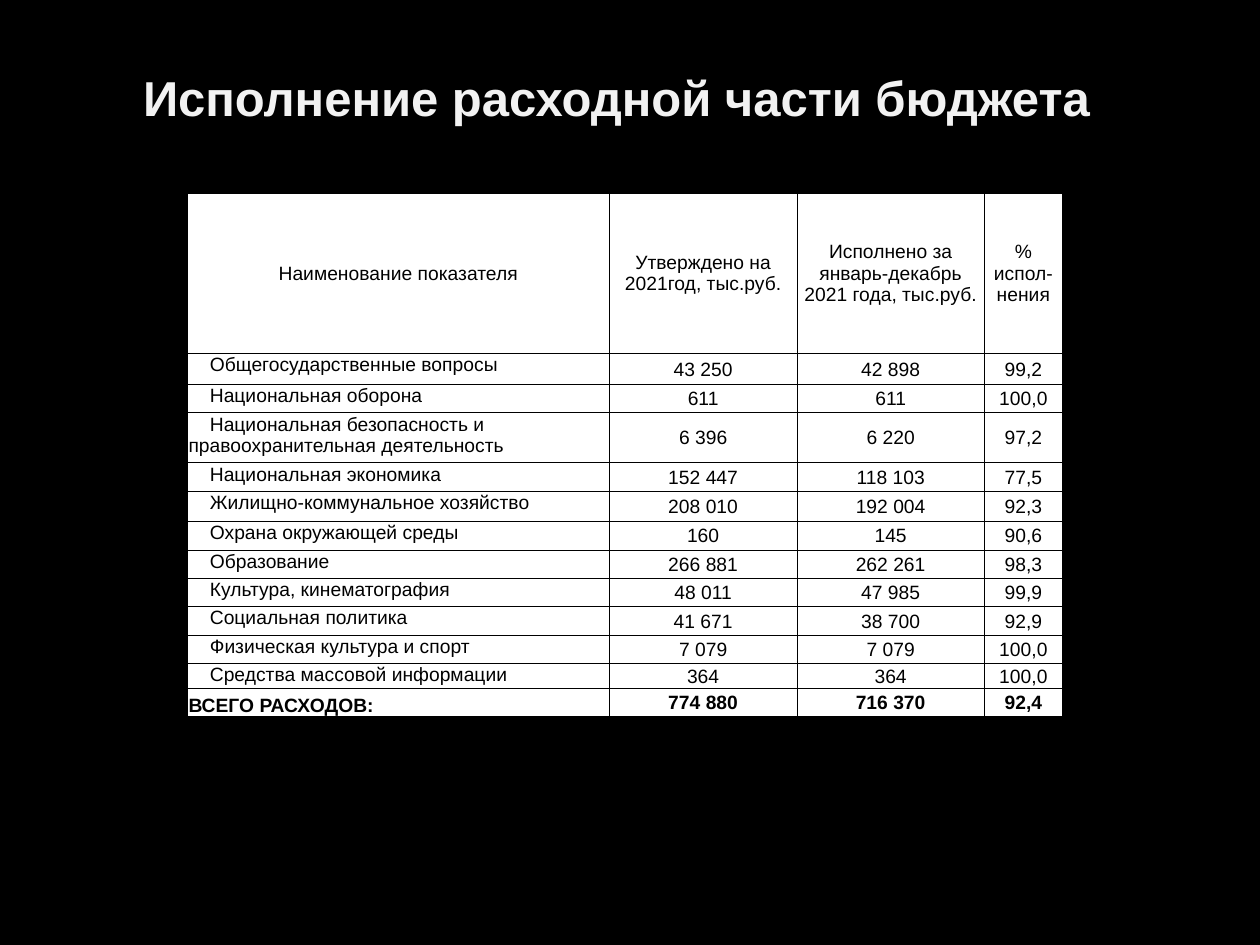
from dataclasses import dataclass
from lxml.etree import SubElement
from pptx import Presentation
from pptx.dml.color import RGBColor as Color
from pptx.enum.text import MSO_ANCHOR as Anchor, PP_ALIGN as Align
from pptx.oxml.ns import qn
from pptx.util import Cm, Pt

TITLE = "Исполнение расходной части бюджета"
HEADER = (
    "Наименование показателя",
    "Утверждено на 2021год, тыс.руб.",
    "Исполнено за январь-декабрь 2021 года, тыс.руб.",
    "% испол-нения",
)
EXPENSES = [
    ("Общегосударственные вопросы", "43 250", "42 898", "99,2"),
    ("Национальная оборона", "611", "611", "100,0"),
    ("Национальная безопасность и правоохранительная деятельность", "6 396", "6 220", "97,2"),
    ("Национальная экономика", "152 447", "118 103", "77,5"),
    ("Жилищно-коммунальное хозяйство", "208 010", "192 004", "92,3"),
    ("Охрана окружающей среды", "160", "145", "90,6"),
    ("Образование", "266 881", "262 261", "98,3"),
    ("Культура, кинематография", "48 011", "47 985", "99,9"),
    ("Социальная политика", "41 671", "38 700", "92,9"),
    ("Физическая культура и спорт", "7 079", "7 079", "100,0"),
    ("Средства массовой информации", "364", "364", "100,0"),
]
TOTAL = ("ВСЕГО РАСХОДОВ:", "774 880", "716 370", "92,4")

COLUMN_WIDTHS = (8.5, 3.79, 3.77, 1.58)
ROW_HEIGHTS = (3.23, 0.63, 0.57, 1.01, 0.58, 0.6, 0.58, 0.57, 0.57, 0.58, 0.57, 0.5, 0.57)
NAME_INDENT = 0.43


@dataclass(frozen=True)
class Theme:
    """Colours, font and type sizes of the slide."""
    background: str = "000000"
    title: str = "F2F2F2"
    cell: str = "FFFFFF"
    ink: str = "000000"
    font: str = "Arial"
    title_size: float = 28
    cell_size: float = 11
    border: float = 0.5


THEME = Theme()


def apply(target, values):
    """Set every attribute named in a dict."""
    for name, value in values.items():
        setattr(target, name, value)


def write(para, text, size, color, bold, align):
    """Write one formatted span into a paragraph."""
    para.alignment = align
    span = para.add_run()
    span.text = text
    apply(span.font, {"name": THEME.font, "size": Pt(size), "bold": bold})
    span.font.color.rgb = Color.from_string(color)


def add_borders(cell):
    """Draw a thin line on each side of a cell."""
    properties = cell._tc.get_or_add_tcPr()
    for position, side in enumerate(("lnL", "lnR", "lnT", "lnB")):
        line = properties.makeelement(qn(f"a:{side}"), {"w": str(Pt(THEME.border))})
        fill = SubElement(line, qn("a:solidFill"))
        SubElement(fill, qn("a:srgbClr"), val=THEME.ink)
        properties.insert(position, line)


def add_title(page):
    """Place the slide title."""
    box = page.shapes.add_textbox(Cm(1.27), Cm(0.74), Cm(22.86), Cm(2.44))
    apply(box.text_frame, {"word_wrap": True, "vertical_anchor": Anchor.MIDDLE,
                           "margin_right": Cm(0.8)})
    write(box.text_frame.paragraphs[0], TITLE, THEME.title_size, THEME.title, True, Align.CENTER)


def fill_cell(cell, text, bold, align, anchor, indent):
    """Format one table cell and write its text."""
    apply(cell, {"margin_left": Cm(0.02), "margin_right": Cm(0.02), "margin_top": Cm(0.02),
                 "margin_bottom": 0, "vertical_anchor": anchor})
    cell.fill.solid()
    cell.fill.fore_color.rgb = Color.from_string(THEME.cell)
    add_borders(cell)
    para = cell.text_frame.paragraphs[0]
    write(para, text, THEME.cell_size, THEME.ink, bold, align)
    if indent:
        para._p.get_or_add_pPr().set("indent", str(Cm(indent)))


def add_budget(page):
    """Build the table of budget expenses."""
    rows = [HEADER, *EXPENSES, TOTAL]
    table = page.shapes.add_table(len(rows), len(HEADER), Cm(3.78), Cm(3.89),
                                  Cm(sum(COLUMN_WIDTHS)), Cm(sum(ROW_HEIGHTS))).table
    apply(table, {"first_row": False, "horz_banding": False})
    for column, width in zip(table.columns, COLUMN_WIDTHS):
        column.width = Cm(width)
    for row, height in zip(table.rows, ROW_HEIGHTS):
        row.height = Cm(height)
    for row, values in enumerate(rows):
        is_total = values is TOTAL
        for column, text in enumerate(values):
            align, anchor, indent = Align.CENTER, Anchor.MIDDLE, 0
            if row and not column:
                align = Align.LEFT
                anchor = Anchor.BOTTOM if is_total else Anchor.TOP
                indent = 0 if is_total else NAME_INDENT
            fill_cell(table.cell(row, column), text, is_total, align, anchor, indent)


def main():
    """Build and save the deck."""
    deck = Presentation()
    apply(deck, {"slide_width": Cm(25.4), "slide_height": Cm(19.05)})
    page = deck.slides.add_slide(deck.slide_layouts[6])
    page.background.fill.solid()
    page.background.fill.fore_color.rgb = Color.from_string(THEME.background)
    add_title(page)
    add_budget(page)
    deck.save("out.pptx")


if __name__ == "__main__":
    main()
